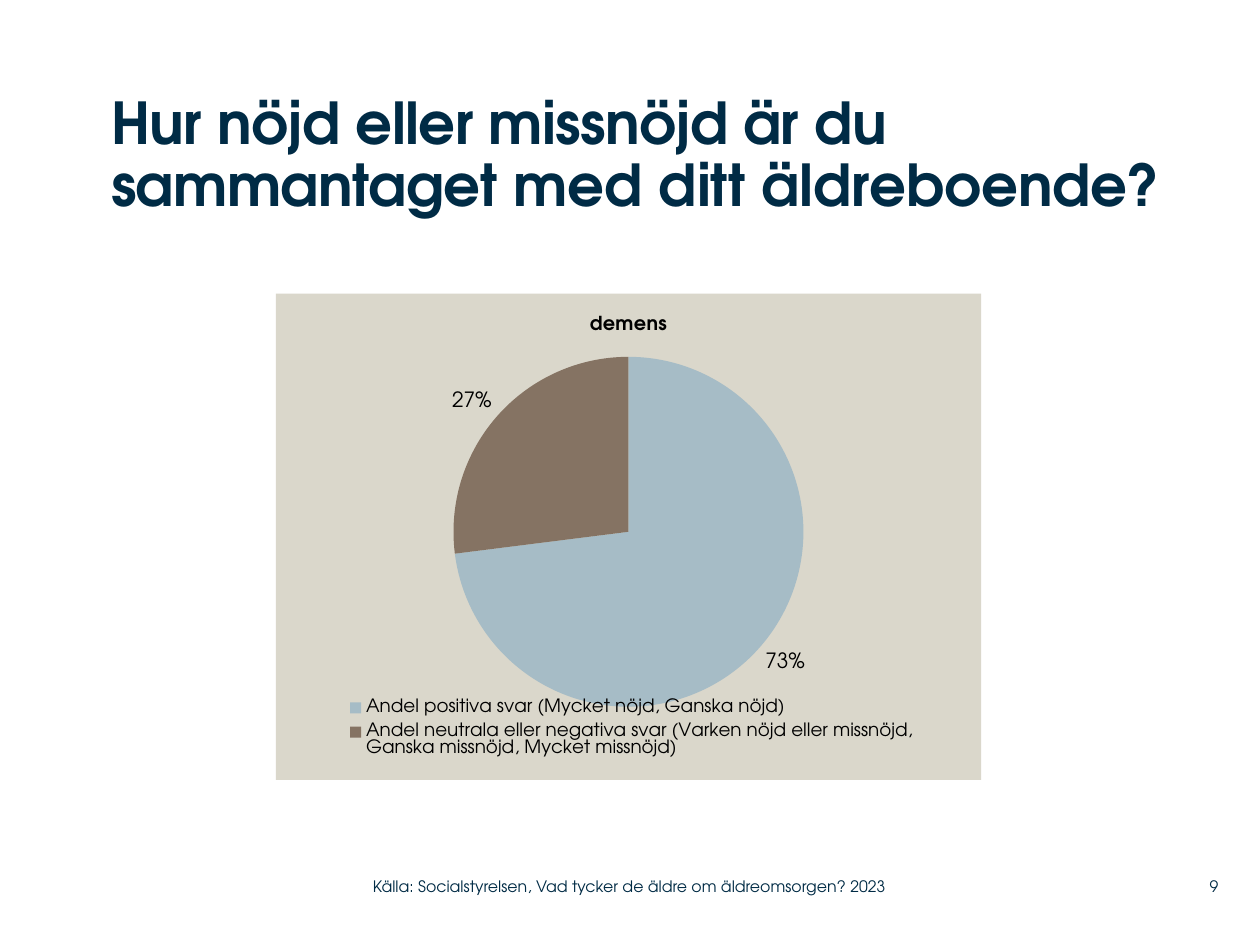
"""Build a slide with a pie chart of satisfaction with elderly care homes."""
from lxml.etree import SubElement
from pptx import Presentation
from pptx.chart.data import CategoryChartData
from pptx.dml.color import RGBColor
from pptx.enum.chart import XL_CHART_TYPE, XL_LABEL_POSITION, XL_LEGEND_POSITION
from pptx.enum.text import MSO_ANCHOR, PP_ALIGN
from pptx.oxml import parse_xml
from pptx.oxml.ns import nsdecls, qn
from pptx.util import Cm, Pt

FONT = "TeX Gyre Adventor"
NAVY = RGBColor(0x00, 0x2B, 0x45)
BLACK = RGBColor(0x00, 0x00, 0x00)
BEIGE = RGBColor(0xDA, 0xD7, 0xCB)
BLUE = RGBColor(0xA6, 0xBC, 0xC6)
BROWN = RGBColor(0x85, 0x73, 0x63)


def style_font(font, size, color, bold=False):
    font.name = FONT
    font.size = Pt(size)
    font.color.rgb = color
    font.bold = bold


def make_layout(left, top, width, height, inner=False):
    layout = parse_xml(f"<c:layout {nsdecls('c')}><c:manualLayout/></c:layout>")
    values = [("layoutTarget", "inner")] if inner else []
    values += [("xMode", "edge"), ("yMode", "edge"), ("x", left), ("y", top), ("w", width), ("h", height)]
    for name, value in values:
        SubElement(layout[0], qn(f"c:{name}")).set("val", str(value))
    return layout


deck = Presentation()
deck.slide_width, deck.slide_height = Cm(25.4), Cm(19.05)
page = deck.slides.add_slide(deck.slide_layouts[5])

title = page.shapes.title
title.left, title.top, title.width, title.height = Cm(2.24), Cm(1.9), Cm(22.43), Cm(3.6)
frame = title.text_frame
frame.margin_left = frame.margin_top = frame.margin_right = frame.margin_bottom = 0
frame.vertical_anchor = MSO_ANCHOR.TOP
frame.word_wrap = True
para = frame.paragraphs[0]
para.alignment = PP_ALIGN.LEFT
para.line_spacing = 0.9
style_font(para.font, 33, NAVY, bold=True)
for text, spacing in (("Hur nöjd eller missnöjd är du sammantaget ", -30), ("med ditt äldreboende?", 0)):
    span = para.add_run()
    span.text = text
    span.font._element.set("spc", str(spacing))

chart_data = CategoryChartData(number_format="0")
chart_data.categories = [
    "Andel positiva svar (Mycket nöjd, Ganska nöjd)",
    "Andel neutrala eller negativa svar (Varken nöjd eller missnöjd, Ganska missnöjd, Mycket missnöjd)",
]
chart_data.add_series("demens", (73, 27))
chart = page.shapes.add_chart(
    XL_CHART_TYPE.PIE, Cm(5.56), Cm(5.92), Cm(14.22), Cm(9.8), chart_data
).chart
style_font(chart.font, 18, BLACK)
background = parse_xml(
    f"<c:spPr {nsdecls('c', 'a')}><a:solidFill><a:srgbClr val='{BEIGE}'/></a:solidFill>"
    "<a:ln><a:noFill/></a:ln></c:spPr>"
)
chart._chartSpace.chart.addnext(background)

chart.has_title = True
heading = chart.chart_title.text_frame
heading.text = "demens"
style_font(heading.paragraphs[0].font, 11, BLACK, bold=True)
chart.chart_title.include_in_layout = False

chart.has_legend = True
legend = chart.legend
legend.position = XL_LEGEND_POSITION.BOTTOM
legend.include_in_layout = False
style_font(legend.font, 10.5, BLACK)
legend._element.find(qn("c:legendPos")).addnext(make_layout(0.09, 0.82, 0.83, 0.15))

plot_area = chart._chartSpace.chart.plotArea
for old_layout in plot_area.findall(qn("c:layout")):
    plot_area.remove(old_layout)
plot_area.insert(0, make_layout(0.25, 0.13, 0.5, 0.72, inner=True))

plot = chart.plots[0]
plot.vary_by_categories = True
for index, color in enumerate((BLUE, BROWN)):
    slice_format = plot.series[0].points[index].format
    slice_format.fill.solid()
    slice_format.fill.fore_color.rgb = color
    slice_format.line.fill.background()
labels = plot.series[0].data_labels
labels.show_percentage = True
labels.show_value = False
labels.number_format = "0%"
labels.number_format_is_linked = False
labels.position = XL_LABEL_POSITION.OUTSIDE_END
style_font(labels.font, 12, BLACK)

for text, left, width, alignment in (
    ("Källa: Socialstyrelsen, Vad tycker de äldre om äldreomsorgen? 2023", 7.52, 11.25, PP_ALIGN.LEFT),
    ("9", 23.37, 1.19, PP_ALIGN.RIGHT),
):
    box = page.shapes.add_textbox(Cm(left), Cm(17.5), Cm(width), Cm(0.74))
    frame = box.text_frame
    frame.margin_left = frame.margin_top = frame.margin_right = frame.margin_bottom = 0
    frame.vertical_anchor = MSO_ANCHOR.MIDDLE
    frame.word_wrap = True
    para = frame.paragraphs[0]
    para.text = text
    para.alignment = alignment
    style_font(para.font, 9, NAVY)

deck.save("out.pptx")
